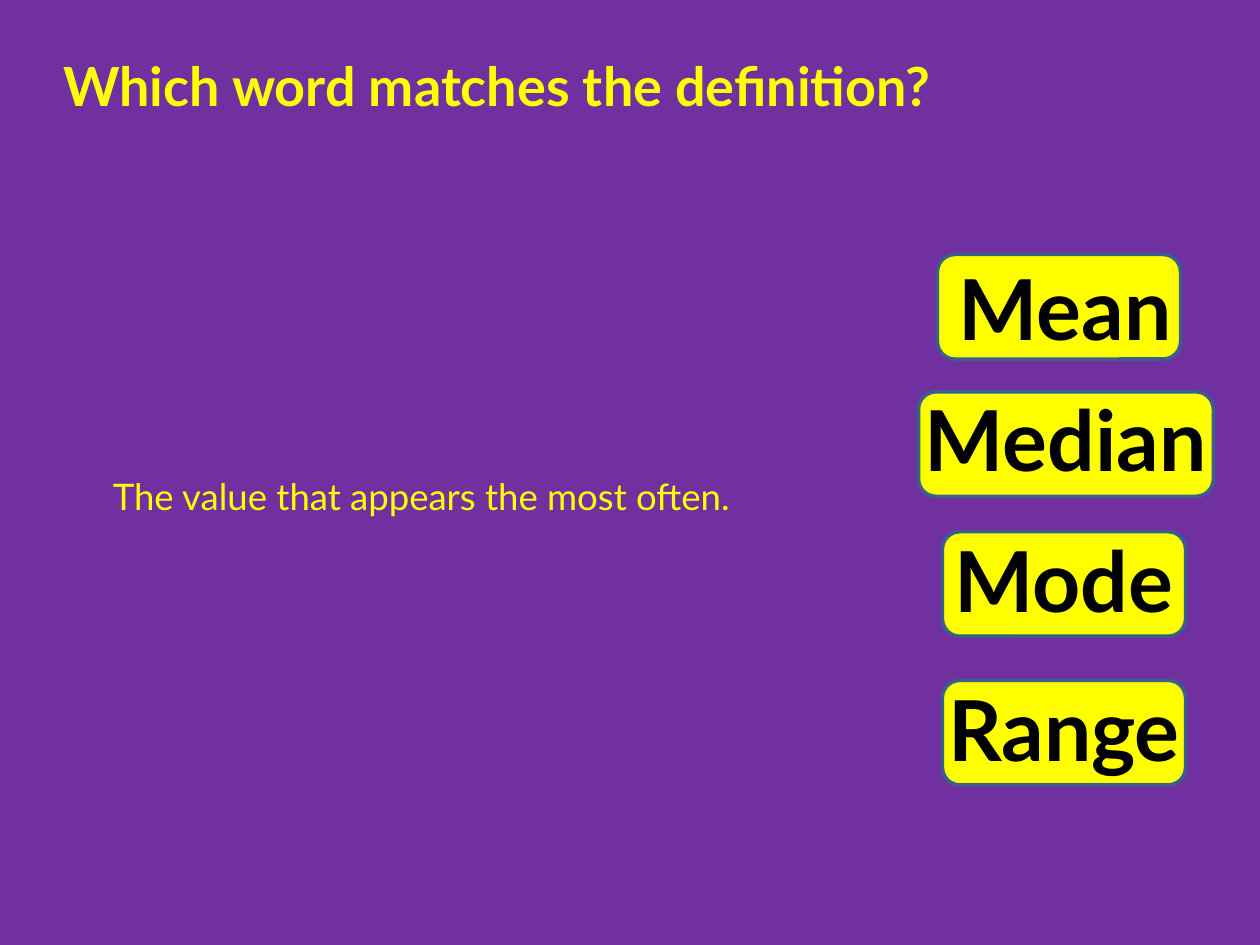
from pptx import Presentation
from pptx.dml.color import RGBColor
from pptx.enum.shapes import MSO_SHAPE
from pptx.enum.text import MSO_ANCHOR, MSO_AUTO_SIZE, PP_ALIGN
from pptx.util import Inches, Pt

YELLOW, PURPLE, BLUE, BLACK = "FFFF00", "7030A0", "3A5F8C", "000000"


def paint(fill, code):
    fill.solid()
    fill.fore_color.rgb = RGBColor.from_string(code)


def place(shape, left, top, width, height):
    shape.left, shape.top = Inches(left), Inches(top)
    shape.width, shape.height = Inches(width), Inches(height)


def write(shape, text, size, code, bold=False):
    frame = shape.text_frame
    frame.text = text
    frame.word_wrap = True
    frame.auto_size = MSO_AUTO_SIZE.NONE
    frame.vertical_anchor = MSO_ANCHOR.MIDDLE
    line = frame.paragraphs[0]
    line.alignment = PP_ALIGN.CENTER
    line.space_before = Pt(0)
    font = line.runs[0].font
    font.name, font.size, font.bold = "Lato", Pt(size), bold
    paint(font.fill, code)


def plain(shape):
    """Drop the bullet and its indent."""
    props = shape.text_frame.paragraphs[0]._p.get_or_add_pPr()
    props.set("marL", "0")
    props.set("indent", "0")
    props.append(props.makeelement(
        "{http://schemas.openxmlformats.org/drawingml/2006/main}buNone", {}))


def add_card(slide, word, box, label):
    """Group a rounded card with the word on it."""
    group = slide.shapes.add_group_shape()
    card = group.shapes.add_shape(
        MSO_SHAPE.ROUNDED_RECTANGLE, *[Inches(n) for n in box])
    card.shadow.inherit = False
    paint(card.fill, YELLOW)
    paint(card.line.fill, BLUE)
    card.line.width = Pt(2)
    text = group.shapes.add_textbox(*[Inches(n) for n in label])
    write(text, word, 48, BLACK, True)


def main():
    deck = Presentation()
    deck.slide_width, deck.slide_height = Inches(10), Inches(7.5)
    slide = deck.slides.add_slide(deck.slide_layouts[1])
    paint(slide.background.fill, PURPLE)

    # Question
    title = slide.shapes.title
    place(title, 0.2, 0.32, 7.49, 0.71)
    write(title, "Which word matches the definition?", 30.8, YELLOW, True)

    # Answer cards: word, card left, top and width, label left, top and width
    cards = [
        ("Mean", 7.44, 2.02, 1.93, 7.32, 2.15, 2.27),
        ("Median", 7.29, 3.11, 2.34, 7.08, 3.19, 2.76),
        ("Mode", 7.48, 4.22, 1.93, 7.31, 4.31, 2.27),
        ("Range", 7.48, 5.4, 1.93, 7.31, 5.49, 2.27),
    ]
    for word, left, top, width, start, high, span in cards:
        add_card(slide, word, (left, top, width, 0.83),
                 (start, high, span, 0.57))

    # Definition
    body = slide.placeholders[1]
    place(body, 0.35, 3.58, 5.99, 0.71)
    write(body, "The value that appears the most often.", 20.9, YELLOW)
    plain(body)

    deck.save("out.pptx")


if __name__ == "__main__":
    main()
